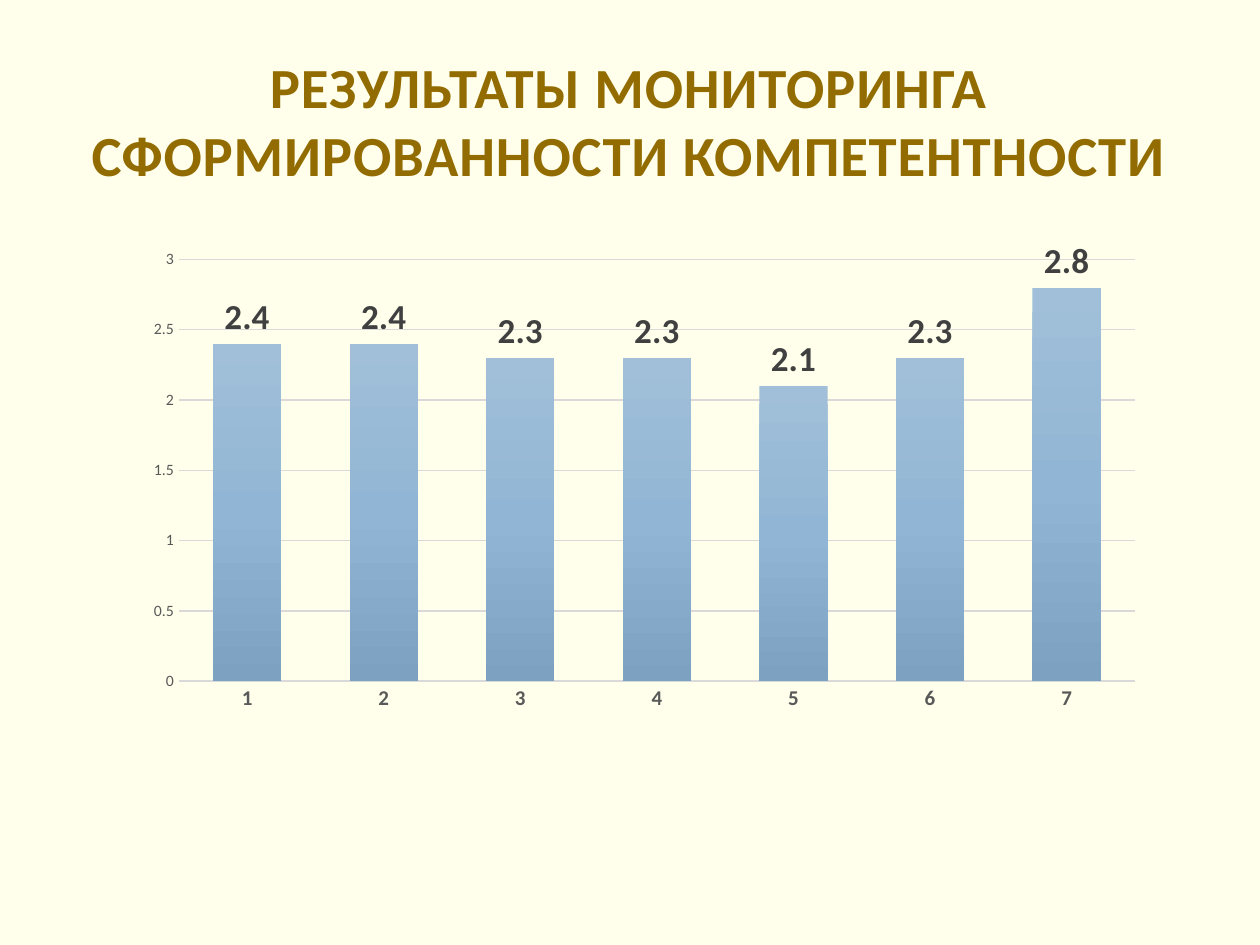
from copy import deepcopy

from pptx import Presentation
from pptx.chart.data import CategoryChartData
from pptx.dml.color import RGBColor
from pptx.enum import chart as ch, shapes, text
from pptx.oxml.ns import qn
from pptx.util import Inches, Pt

TITLE = "РЕЗУЛЬТАТЫ МОНИТОРИНГА СФОРМИРОВАННОСТИ КОМПЕТЕНТНОСТИ"
SCORES = {"1": 2.4, "2": 2.4, "3": 2.3, "4": 2.3, "5": 2.1, "6": 2.3, "7": 2.8}
COLORS = {"page": "FFFFEB", "title": "926C00", "axis": "595959",
          "label": "404040", "grid": "D9D9D9", "base": "000000",
          "top": "A1BFD8", "mid": "91B6D5", "low": "7DA2C1"}
FACE = "Calibri"


def rgb(name):
    return RGBColor.from_string(COLORS[name])


def style(font, size, color, bold=False):
    font.name, font.size, font.bold = FACE, Pt(size), bold
    font.color.rgb = rgb(color)


def rule(line, width):
    line.color.rgb = rgb("grid")
    line.width = Pt(width)


def shade(fill):
    """Fill downwards through the three bar colours."""
    fill.gradient()
    fill.gradient_angle = 270
    for stop, name, place in zip(fill.gradient_stops, ("top", "low"), (0, 1)):
        stop.color.rgb = rgb(name)
        stop.position = place


def add_mid(series):
    """Add the middle gradient stop, which has no public method."""
    stops = next(series._element.iter(qn("a:gsLst")))
    mid = deepcopy(stops[0])
    mid.set("pos", "50000")
    mid[0].set("val", COLORS["mid"])
    stops.insert(1, mid)


def add_page(slide, width, height):
    page = slide.shapes.add_shape(shapes.MSO_SHAPE.RECTANGLE, 0, 0, width, height)
    page.shadow.inherit = False
    page.fill.solid()
    page.fill.fore_color.rgb = rgb("page")
    page.line.fill.background()


def add_title(slide):
    box = slide.shapes.add_textbox(Inches(0.49), Inches(0.4), Inches(9), Inches(1.1))
    frame = box.text_frame
    frame.word_wrap = True
    frame.vertical_anchor = text.MSO_ANCHOR.MIDDLE
    para = frame.paragraphs[0]
    para.alignment = text.PP_ALIGN.CENTER
    run = para.add_run()
    run.text = TITLE
    style(run.font, 32.4, "title", True)
    run.font._element.set("spc", "50")


def add_scores(slide):
    data = CategoryChartData()
    data.categories = list(SCORES)
    data.add_series("Series 1", list(SCORES.values()))
    chart = slide.shapes.add_chart(
        ch.XL_CHART_TYPE.COLUMN_CLUSTERED, Inches(1.06), Inches(1.9),
        Inches(8.11), Inches(3.82), data).chart
    chart.has_legend = chart.has_title = False
    style(chart.font, 10, "base")

    plot = chart.plots[0]
    plot.gap_width, plot.overlap = 100, -24
    plot.vary_by_categories = False
    bars = plot.series[0]
    shade(bars.format.fill)
    add_mid(bars)
    labels = bars.data_labels
    labels.show_value = True
    labels.position = ch.XL_LABEL_POSITION.OUTSIDE_END
    style(labels.font, 20, "label", True)

    cats, vals = chart.category_axis, chart.value_axis
    for axis in (cats, vals):
        axis.major_tick_mark = axis.minor_tick_mark = ch.XL_TICK_MARK.NONE
    style(cats.tick_labels.font, 12, "axis", True)
    style(vals.tick_labels.font, 9, "axis")
    rule(cats.format.line, 1)
    vals.format.line.fill.background()
    rule(vals.major_gridlines.format.line, 0.75)
    vals.minimum_scale, vals.maximum_scale, vals.major_unit = 0, 3, 0.5


def main():
    deck = Presentation()
    deck.slide_width, deck.slide_height = Inches(10), Inches(7.5)
    slide = deck.slides.add_slide(deck.slide_layouts[6])
    add_page(slide, deck.slide_width, deck.slide_height)
    add_title(slide)
    add_scores(slide)
    deck.save("out.pptx")


if __name__ == "__main__":
    main()
